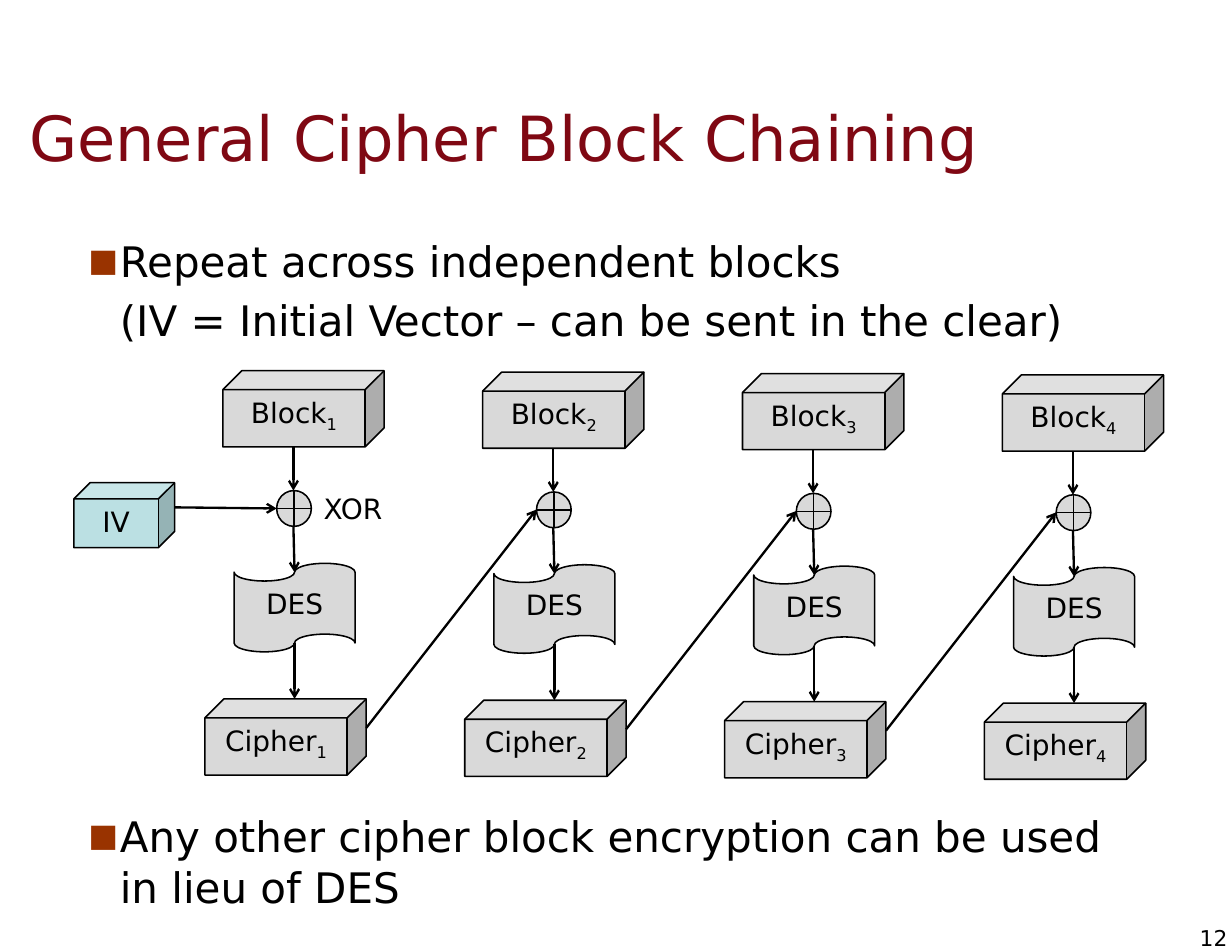
from lxml import etree
from pptx import Presentation
from pptx.dml.color import RGBColor
from pptx.enum.shapes import MSO_CONNECTOR, MSO_SHAPE as SHAPE
from pptx.enum.text import MSO_ANCHOR as ANCHOR, PP_ALIGN as ALIGN
from pptx.oxml.ns import qn
from pptx.util import Inches, Pt

FONT = "DejaVu Sans"
BLACK, MAROON, RUST, GREY, CYAN = "000000", "7F0813", "993300", "D9D9D9", "BBE0E3"

TITLE = "General Cipher Block Chaining"
INTRO = [("Repeat across independent blocks", True),
         ("(IV = Initial Vector – can be sent in the clear)", False)]
CLOSING = [("Any other cipher block encryption can be used in lieu of DES", True)]

COLUMNS = 4
STEP_X, STEP_Y = 2.32, 0.0125  # each column sits slightly lower than the last
# Parts of the first column: shape, left, top, width, height, label, numbered
PARTS = [
    (SHAPE.CUBE, 1.99, 3.31, 1.44, 0.68, "Block", True),
    (SHAPE.CUBE, 1.83, 6.24, 1.44, 0.68, "Cipher", True),
    (SHAPE.FLOWCHART_PUNCHED_TAPE, 2.09, 5.03, 1.08, 0.79, "DES", False),
    (SHAPE.FLOWCHART_OR, 2.47, 4.38, 0.31, 0.32, "", False),
]
# Arrows of the first column: from x, y to x, y
FLOWS = [
    (2.62, 3.99, 2.62, 4.38),
    (2.62, 4.7, 2.63, 5.11),
    (2.63, 5.74, 2.63, 6.24),
]
CHAIN = (3.27, 6.5, 4.79, 4.55)  # cipher to the next column's XOR

prs = Presentation()
prs.slide_width, prs.slide_height = Inches(11), Inches(8.5)
slide = prs.slides.add_slide(prs.slide_layouts[6])
shapes = slide.shapes


def rgb(value):
    return RGBColor.from_string(value)


def write(p, text, size=18, color=BLACK, align=ALIGN.LEFT, subscript=""):
    p.alignment = align
    for part in filter(None, (text, subscript)):
        r = p.add_run()
        r.text = part
        r.font.size, r.font.name = Pt(size), FONT
        r.font.color.rgb = rgb(color)
    if subscript:
        r.font._element.set("baseline", "-25000")


def add_box(x, y, w, h, inset=(0.1, 0.05), anchor=ANCHOR.TOP, wrap=True):
    tf = shapes.add_textbox(*map(Inches, (x, y, w, h))).text_frame
    tf.word_wrap, tf.vertical_anchor = wrap, anchor
    tf.margin_left = tf.margin_right = Inches(inset[0])
    tf.margin_top = tf.margin_bottom = Inches(inset[1])
    return tf


def add_bullets(y, items):
    tf = add_box(0.54, y, 9.62, 1.04, inset=(0.11, 0.06))
    for i, (text, bulleted) in enumerate(items):
        p = tf.add_paragraph() if i else tf.paragraphs[0]
        pPr = p._p.get_or_add_pPr()
        pPr.set("marL", str(Inches(0.42)))
        pPr.set("indent", str(Inches(-0.28 if bulleted else 0)))
        if bulleted:
            color = etree.SubElement(pPr, qn("a:buClr"))
            etree.SubElement(color, qn("a:srgbClr"), val=RUST)
            etree.SubElement(pPr, qn("a:buSzPct"), val="75000")
            etree.SubElement(pPr, qn("a:buFont"), typeface=FONT)
            etree.SubElement(pPr, qn("a:buChar"), char="■")
        if i:
            p.space_before = Pt(5.4)
        write(p, text, size=27)


def add_part(kind, x, y, w, h, label, fill=GREY, subscript=""):
    sp = shapes.add_shape(kind, *map(Inches, (x, y, w, h)))
    sp.shadow.inherit = False
    sp.fill.solid()
    sp.fill.fore_color.rgb = rgb(fill)
    sp.line.color.rgb, sp.line.width = rgb(BLACK), Pt(1)
    if label:
        sp.text_frame.vertical_anchor = ANCHOR.TOP
        write(sp.text_frame.paragraphs[0], label, align=ALIGN.CENTER, subscript=subscript)


def add_arrow(x1, y1, x2, y2):
    line = shapes.add_connector(MSO_CONNECTOR.STRAIGHT, *map(Inches, (x1, y1, x2, y2)))
    line.line.color.rgb, line.line.width = rgb(BLACK), Pt(1.5)
    etree.SubElement(line.line._get_or_add_ln(), qn("a:tailEnd"), type="arrow")
    etree.SubElement(line._element.spPr, qn("a:effectLst"))


def add_shifted_arrow(ends, dx, dy):
    x1, y1, x2, y2 = ends
    add_arrow(x1 + dx, y1 + dy, x2 + dx, y2 + dy)


title = add_box(0.15, 0.7, 10.53, 1.04, inset=(0.11, 0.06), anchor=ANCHOR.MIDDLE)
write(title.paragraphs[0], TITLE, size=40, color=MAROON)
add_bullets(2.04, INTRO)

add_part(SHAPE.CUBE, 0.66, 4.31, 0.9, 0.58, "IV", fill=CYAN)
offsets = [(i * STEP_X, i * STEP_Y) for i in range(COLUMNS)]
for number, (dx, dy) in enumerate(offsets, 1):
    for kind, x, y, w, h, label, numbered in PARTS:
        add_part(kind, x + dx, y + dy, w, h, label,
                 subscript=str(number) if numbered else "")
    for flow in FLOWS:
        add_shifted_arrow(flow, dx, dy)
for dx, dy in offsets[:-1]:
    add_shifted_arrow(CHAIN, dx, dy)
add_arrow(1.56, 4.53, 2.47, 4.54)

page = add_box(10.62, 8.25, 0.34, 0.24, inset=(0, 0), anchor=ANCHOR.MIDDLE, wrap=False)
write(page.paragraphs[0], "12", size=14, align=ALIGN.RIGHT)
write(add_box(2.79, 4.34, 0.79, 0.4).paragraphs[0], "XOR")
add_bullets(7.18, CLOSING)

prs.save("out.pptx")
